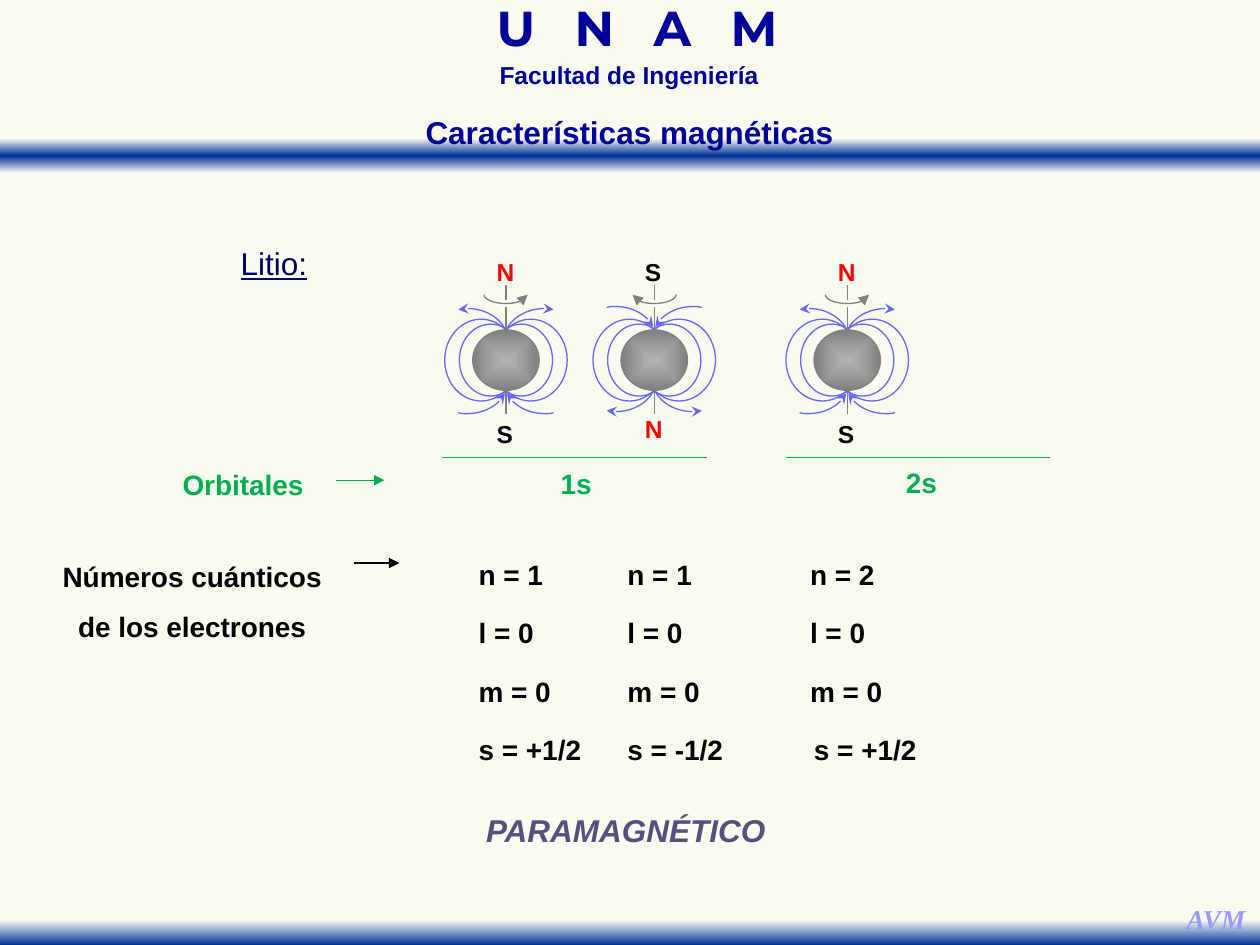
from dataclasses import dataclass, field

import pptx
import pptx.dml.color
import pptx.enum.shapes
import pptx.enum.text
import pptx.oxml
import pptx.oxml.ns
import pptx.util

Cm = pptx.util.Cm
Shape = pptx.enum.shapes.MSO_SHAPE
Align = pptx.enum.text.PP_ALIGN

COLOURS = {
    "paper": "FAFAF0", "fade": "FAFAF2", "band": "003399", "heading": "000099",
    "signature": "9999FF", "element": "000066", "orbital": "00B050",
    "black": "000000", "north": "FF0000", "field": "6666FF",
    "metal": "808080", "shine": "B4B4B4", "result": "52527C",
}
BOLD = {"name": "Arial", "bold": True}
DOWNWARD = '<a:lin ang="5400000" scaled="0"/>'
FROM_CENTRE = ('<a:path path="shape"><a:fillToRect l="50000" t="50000" '
               'r="50000" b="50000"/></a:path>')


@dataclass
class Label:
    text: str
    left: float
    top: float
    width: float
    height: float
    size: float
    colour: str
    align: Align = Align.JUSTIFY
    spacing: float = 1.5
    wrap: bool = True
    font: dict = field(default_factory=lambda: BOLD)


@dataclass
class Electron:
    """An electron's magnet, its pole labels and its quantum numbers."""
    x: float
    up: bool
    south_top: float
    numbers_left: float
    numbers: tuple
    last_shift: float = 0


CENTRE_Y = 7.26
ELECTRONS = (
    Electron(10.2, True, 1.07, 9.4, ("n = 1", "l = 0", "m = 0", "s = +1/2")),
    Electron(13.19, False, 0.97, 12.4, ("n = 1", "l = 0", "m = 0", "s = -1/2")),
    Electron(17.08, True, 1.07, 16.08, ("n = 2", "l = 0", "m = 0", "s = +1/2"), 0.08),
)
LABELS = (
    Label("Facultad de Ingeniería", 8.15, 1.24, 9.07, 0.69, 14, "heading",
          Align.CENTER, 0.7),
    Label("AVM", 23.65, 18.24, 1.73, 0.94, 15.6, "signature", Align.CENTER, 0.7, False,
          {"name": "Times New Roman", "bold": True, "italic": True}),
    Label("Litio:", 4.6, 4.42, 2.36, 1.4, 18, "element",
          font={"name": "Arial", "underline": True}),
    Label("Orbitales", 3.43, 8.97, 3.33, 1.14, 16, "orbital"),
    Label("1s", 11.05, 8.94, 1.32, 1.14, 16, "orbital"),
    Label("2s", 18.01, 8.92, 1.32, 1.3, 16, "orbital"),
    Label("Números cuánticos de los electrones", 0.84, 10.82, 6.07, 2.31, 16,
          "black", Align.CENTER),
    Label("PARAMAGNÉTICO", 9.55, 15.85, 6.27, 1.4, 18, "result",
          font=BOLD | {"italic": True}),
)
UNIVERSITY = Label("U N A M", 7.88, 0.15, 9.93, 1.09, 28, "heading", Align.CENTER, 0.7,
                   font={"name": "Montserrat", "bold": True})
TITLE = Label("Características magnéticas", 7.19, 2.36, 11, 0.81, 18, "heading",
              Align.CENTER, 0.7)


def rgb(name: str):
    return pptx.dml.color.RGBColor.from_string(COLOURS[name])


def write(box, label: Label):
    """Place a text shape, fill it with the label and return its run."""
    for name in ("left", "top", "width", "height"):
        setattr(box, name, Cm(getattr(label, name)))
    frame = box.text_frame
    frame.word_wrap = label.wrap
    frame.auto_size = pptx.enum.text.MSO_AUTO_SIZE.SHAPE_TO_FIT_TEXT
    frame.vertical_anchor = pptx.enum.text.MSO_ANCHOR.TOP
    para = frame.paragraphs[0]
    para.alignment = label.align
    para.line_spacing = label.spacing
    span = para.add_run()
    span.text = label.text
    for name, value in label.font.items():
        setattr(span.font, name, value)
    span.font.size = pptx.util.Pt(label.size)
    span.font.color.rgb = rgb(label.colour)
    return span


def add_label(page, label: Label):
    return write(page.shapes.add_textbox(0, 0, 0, 0), label)


def outline(shape, colour: str, **ends: str):
    """Set a thin line; ends maps headEnd or tailEnd to an arrow type."""
    shape.line.color.rgb = rgb(colour)
    shape.line.width = pptx.util.Pt(0.75)
    for end, kind in ends.items():
        mark = pptx.oxml.parse_xml(
            f'<a:{end} {pptx.oxml.ns.nsdecls("a")} type="{kind}"/>')
        shape.line._get_or_add_ln().append(mark)


def add_line(page, x1: float, y1: float, x2: float, y2: float, colour: str, **ends: str):
    line = page.shapes.add_connector(pptx.enum.shapes.MSO_CONNECTOR.STRAIGHT,
                                     Cm(x1), Cm(y1), Cm(x2), Cm(y2))
    outline(line, colour, **ends)
    line.element.spPr.append(pptx.oxml.parse_xml(
        f'<a:effectLst {pptx.oxml.ns.nsdecls("a")}/>'))


def add_plain(page, kind, left: float, top: float, width: float, height: float):
    shape = page.shapes.add_shape(kind, Cm(left), Cm(top), Cm(width), Cm(height))
    shape.shadow.inherit = False
    shape.fill.background()
    shape.line.fill.background()
    return shape


def add_ellipse(page, x: float, y: float, width: float, height: float, colour: str):
    shape = add_plain(page, Shape.OVAL, x - width / 2, y - height / 2, width, height)
    outline(shape, colour)
    return shape


def shade(shape, stops: dict, direction: str):
    marks = "".join(f'<a:gs pos="{place * 1000}"><a:srgbClr val="{COLOURS[name]}"/></a:gs>'
                    for place, name in stops.items())
    empty = shape.element.spPr.find(pptx.oxml.ns.qn("a:noFill"))
    shape.element.spPr.replace(empty, pptx.oxml.parse_xml(
        f'<a:gradFill {pptx.oxml.ns.nsdecls("a")} rotWithShape="1">'
        f'<a:gsLst>{marks}</a:gsLst>{direction}</a:gradFill>'))


def add_curve(page, points: list, colour: str, **ends: str):
    """Draw joined cubic curves: a start, then three points for each curve."""
    steps, track = 12, [points[0]]
    for first in range(0, len(points) - 1, 3):
        corners = points[first:first + 4]
        for step in range(1, steps + 1):
            t = step / steps
            weights = ((1 - t) ** 3, 3 * t * (1 - t) ** 2, 3 * t * t * (1 - t), t ** 3)
            track.append(tuple(sum(w * corner[axis] for w, corner in zip(weights, corners))
                               for axis in (0, 1)))
    track = [(Cm(x), Cm(y)) for x, y in track]
    builder = page.shapes.build_freeform(*track[0])
    builder.add_line_segments(track[1:], close=False)
    curve = builder.convert_to_shape()
    curve.shadow.inherit = False
    curve.fill.background()
    outline(curve, colour, **ends)


def add_magnet(page, electron: Electron):
    x, y = electron.x, CENTRE_Y
    for offset, width, height in ((0.5, 1.47, 1.65), (0.31, 1.26, 1.45)):
        for side in (1, -1):
            add_ellipse(page, x + side * offset, y, width, height, "field")
    sphere = add_ellipse(page, x, y, 1.34, 1.22, "metal")
    shade(sphere, {0: "shine", 100: "metal"}, FROM_CENTRE)
    for start, end in ((0.63, 1.09), (-0.61, -1.07), (-1.22, -1.52)):
        add_line(page, x, y + start, x, y + end, "metal")

    north = -1 if electron.up else 1
    spin = ((0.44, -1.32), (0.44, -1.22), (0.24, -1.14), (0, -1.14),
            (-0.24, -1.14), (-0.44, -1.22), (-0.44, -1.32))
    add_curve(page, [(x - north * dx, y + dy) for dx, dy in spin], "metal",
              headEnd="triangle")
    force = ((0.02, 0.63), (0.15, 0.88), (0.45, 1.04), (0.78, 1.04),
             (0.84, 1.04), (0.9, 1.04), (0.96, 1.02))
    for pole, end, lift in ((north, "tailEnd", 0), (-north, "headEnd", 0.04)):
        for side in (1, -1):
            add_curve(page, [(x + side * dx, y + pole * (dy + lift)) for dx, dy in force],
                      "field", **{end: "stealth"})
    letters = (("N", "north"), ("S", "black"))
    tops = (-2.21, electron.south_top)
    for (letter, colour), top in zip(letters if electron.up else letters[::-1], tops):
        add_label(page, Label(letter, x - 0.44, y + top, 0.89, 0.84, 14, colour, spacing=1))


def add_numbers(page, electron: Electron):
    for row, text in enumerate(electron.numbers):
        shift = electron.last_shift if row == len(electron.numbers) - 1 else 0
        add_label(page, Label(text, electron.numbers_left + shift, 10.77 + 1.18 * row,
                              2.8, 1.3, 16, "black"))


def main():
    deck = pptx.Presentation()
    deck.slide_width, deck.slide_height = Cm(25.4), Cm(19.05)
    page = deck.slides.add_slide(deck.slide_layouts[5])
    page.background.fill.solid()
    page.background.fill.fore_color.rgb = rgb("paper")

    for top, stops in ((2.79, {0: "fade", 50: "band", 100: "fade"}),
                       (18.35, {28: "fade", 100: "band"})):
        shade(add_plain(page, Shape.RECTANGLE, 0, top, 25.4, 0.7), stops, DOWNWARD)
    span = add_label(page, UNIVERSITY)
    span._r.get_or_add_rPr().set("spc", "735")
    for label in LABELS:
        add_label(page, label)

    add_line(page, 6.78, 9.68, 7.75, 9.68, "orbital", tailEnd="triangle")
    add_line(page, 7.13, 11.35, 8.05, 11.35, "black", tailEnd="triangle")
    for left in (8.92, 15.84):
        add_line(page, left, 9.22, left + 5.33, 9.22, "orbital")
    for electron in ELECTRONS:
        add_magnet(page, electron)
        add_numbers(page, electron)

    title = page.shapes.title
    write(title, TITLE)
    page.shapes.element.append(title.element)  # in front of the band
    deck.save("out.pptx")


if __name__ == "__main__":
    main()
